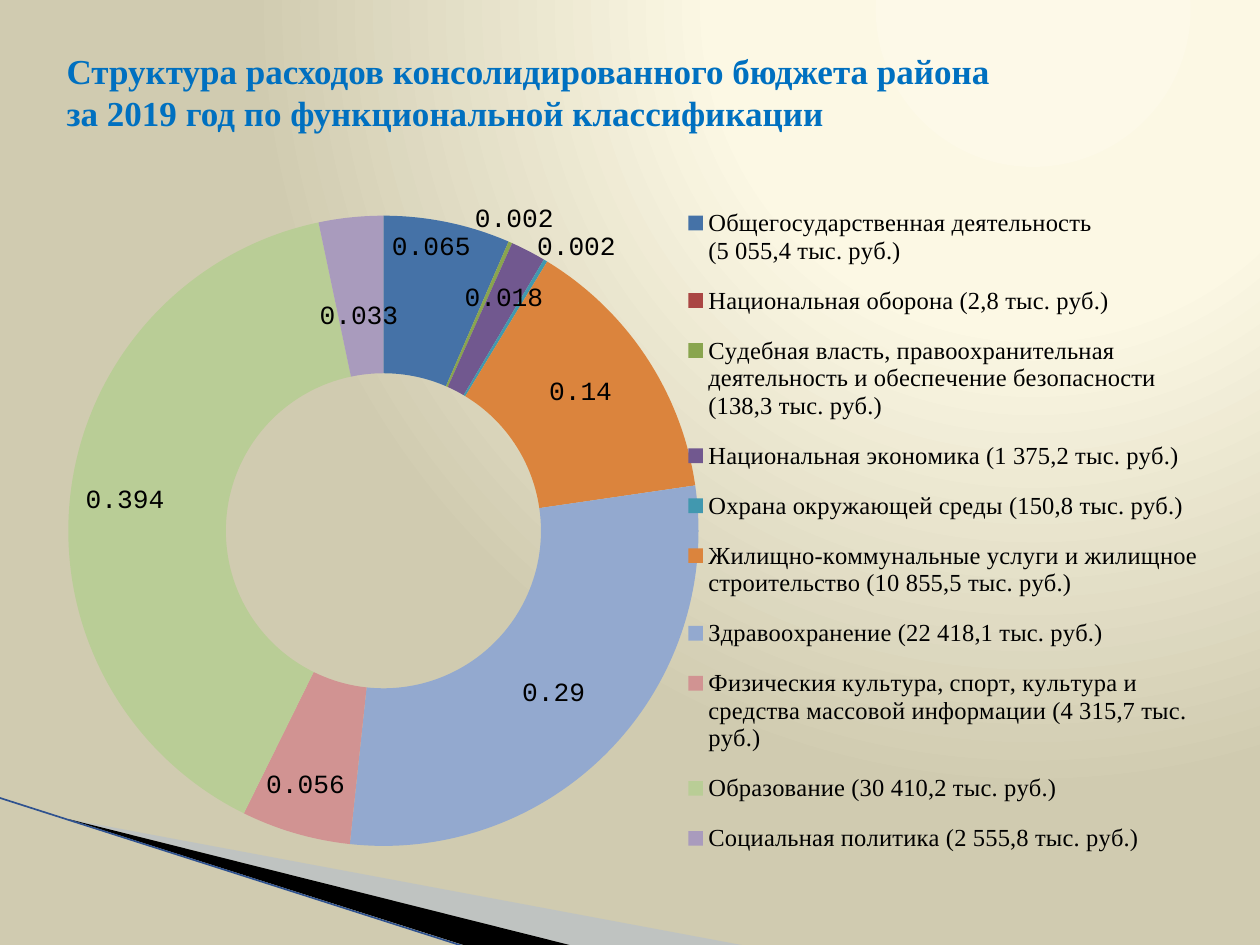
from pptx import Presentation, oxml
from pptx.chart import data as chart_data
from pptx.dml import color
from pptx.enum import chart as charts, shapes, text
from pptx.oxml import ns
from pptx.util import Inches, Pt
from lxml import etree

COLORS = {
    "title": "0070C0", "text": "000000", "wedge": "A7B9DB", "blade": "000000",
    "edge": "2F528F", "center": "FDF9E8", "middle": "FCF8E4", "outer": "D0CBB0",
}
TITLE = ("Структура расходов консолидированного бюджета района\v"
         "за 2019 год по функциональной классификации")
EXPENSES = [
    ("Общегосударственная деятельность\n(5 055,4 тыс. руб.)", 0.065, "4572A7", (0, -0.07)),
    ("Национальная оборона (2,8 тыс. руб.)", None, "AA4643", None),
    ("Судебная власть, правоохранительная деятельность и обеспечение безопасности\n"
     "(138,3 тыс. руб.)", 0.002, "89A54E", (0.03, -0.13)),
    ("Национальная экономика (1 375,2 тыс. руб.)", 0.018, "71588F", (0.01, -0.03)),
    ("Охрана окружающей среды (150,8 тыс. руб.)", 0.002, "4198AF", (0.06, -0.11)),
    ("Жилищно-коммунальные услуги и жилищное строительство (10 855,5 тыс. руб.)",
     0.14, "DB843D", (0, -0.01)),
    ("Здравоохранение (22 418,1 тыс. руб.)", 0.29, "93A9CF", None),
    ("Физическия культура, спорт, культура и средства массовой информации "
     "(4 315,7 тыс. руб.)", 0.056, "D19392", (-0.01, 0.04)),
    ("Образование (30 410,2 тыс. руб.)", 0.394, "B9CD96", (-0.02, 0)),
    ("Социальная политика (2 555,8 тыс. руб.)", 0.033, "A99BBD", (0, 0.03)),
]


def rgb(name):
    """Return the colour for a palette name or a hex string."""
    return color.RGBColor.from_string(COLORS.get(name, name))


def style_font(font, size, name, fill="text", bold=False):
    """Set size, typeface, colour and weight of a font."""
    font.size, font.name, font.bold = Pt(size), name, bold
    font.color.rgb = rgb(fill)


def manual_layout(**values):
    """Build a chart layout element from its settings."""
    layout = etree.Element(ns.qn("c:layout"))
    manual = etree.SubElement(layout, ns.qn("c:manualLayout"))
    for key, value in values.items():
        etree.SubElement(manual, ns.qn("c:" + key)).set("val", str(value))
    return layout


def place_part(part, index, **values):
    """Replace the layout of a chart part, as its child at the given index."""
    for old in part.findall(ns.qn("c:layout")):
        part.remove(old)
    part.insert(index, manual_layout(**values))


def paint_background(page):
    """Fill the page with a radial gradient centred at the upper right."""
    stops = "".join(
        f'<a:gs pos="{place * 1000}"><a:srgbClr val="{COLORS[name]}"/></a:gs>'
        for place, name in ((0, "center"), (40, "middle"), (100, "outer")))
    gradient = oxml.parse_xml(
        f'<a:gradFill rotWithShape="1" {ns.nsdecls("a")}><a:gsLst>{stops}</a:gsLst>'
        '<a:path path="circle"><a:fillToRect l="65000" t="0" r="0" b="98000"/></a:path>'
        '</a:gradFill>')
    page.background.fill.solid()
    solid = page.element.find(".//" + ns.qn("p:bgPr")).find(ns.qn("a:solidFill"))
    solid.getparent().replace(solid, gradient)


def add_wedge(page, points, fill, alpha=None):
    """Draw a filled outline through points given in inches."""
    corners = [(Inches(x), Inches(y)) for x, y in points]
    builder = page.shapes.build_freeform(*corners[0])
    builder.add_line_segments(corners[1:], close=True)
    wedge = builder.convert_to_shape()
    wedge.shadow.inherit = False
    wedge.fill.solid()
    wedge.fill.fore_color.rgb = rgb(fill)
    wedge.line.fill.background()
    if alpha:
        tint = wedge.element.spPr.find(ns.qn("a:solidFill"))[0]
        etree.SubElement(tint, ns.qn("a:alpha")).set("val", str(alpha * 1000))


def add_corner(page, left, top, bottom):
    """Draw the swept wedges and edge line at the lower left."""
    tip = (left, top)
    add_wedge(page, [tip, (left + 5.4, bottom), (left + 4.01, bottom)], "wedge", 40)
    add_wedge(page, [tip, (left + 4.02, bottom), (left + 3.17, bottom)], "blade")
    edge = page.shapes.add_connector(
        shapes.MSO_CONNECTOR.STRAIGHT,
        Inches(-0.01), Inches(6.33), Inches(3.71), Inches(7.52))
    edge.line.color.rgb = rgb("edge")
    edge.line.width = Pt(0.95)
    etree.SubElement(edge.element.spPr, ns.qn("a:effectLst"))


def add_title(page, *bounds):
    """Place the two-line heading in the given bounds."""
    box = page.shapes.add_textbox(*map(Inches, bounds))
    frame = box.text_frame
    frame.word_wrap = True
    frame.vertical_anchor = text.MSO_ANCHOR.MIDDLE
    para = frame.paragraphs[0]
    para.text = TITLE
    for span in para.runs:
        style_font(span.font, 20, "Times New Roman", "title", True)


def add_expense_chart(page, *bounds):
    """Place the doughnut of expenses with its legend in the given bounds."""
    table = chart_data.CategoryChartData()
    table.categories = [row[0] for row in EXPENSES]
    table.add_series("Series 1", [row[1] for row in EXPENSES])
    chart = page.shapes.add_chart(
        charts.XL_CHART_TYPE.DOUGHNUT, *map(Inches, bounds), table).chart
    chart.has_title = False
    style_font(chart.font, 18, "Courier New")
    chart.has_legend = True
    chart.legend.position = charts.XL_LEGEND_POSITION.RIGHT
    chart.legend.include_in_layout = False
    style_font(chart.legend.font, 14, "Times New Roman")
    place_part(chart.element.find(".//" + ns.qn("c:legend")), 1,
               xMode="edge", yMode="edge", x=0.53, y=0.03, w=0.45, h=0.95)
    place_part(chart.element.find(".//" + ns.qn("c:plotArea")), 0,
               layoutTarget="inner", xMode="edge", yMode="edge",
               x=0.01, y=0.07, w=0.55, h=0.87)

    area = chart.plots[0]
    area.vary_by_categories = True
    series = area.series[0]
    series.data_labels.show_value = True
    series.data_labels.show_percentage = False
    style_font(series.data_labels.font, 15, "Courier New")
    for index, (_, _, fill, shift) in enumerate(EXPENSES):
        point = series.points[index]
        point.format.fill.solid()
        point.format.fill.fore_color.rgb = rgb(fill)
        point.format.line.fill.background()
        if shift:
            style_font(point.data_label.font, 15, "Courier New")
    shifts = [row[3] for row in EXPENSES if row[3]]
    for label, (x, y) in zip(chart.element.iter(ns.qn("c:dLbl")), shifts):
        place_part(label, 1, x=x, y=y)


def main():
    """Build and save the deck."""
    deck = Presentation()
    deck.slide_width, deck.slide_height = Inches(10), Inches(7.5)
    page = deck.slides.add_slide(deck.slide_layouts[6])
    paint_background(page)
    add_corner(page, 0.54, 6.5, 7.51)
    add_expense_chart(page, 0.35, 1.31, 9.45, 5.75)
    add_title(page, 0.43, 0.3, 9.29, 0.85)
    deck.save("out.pptx")


if __name__ == "__main__":
    main()
